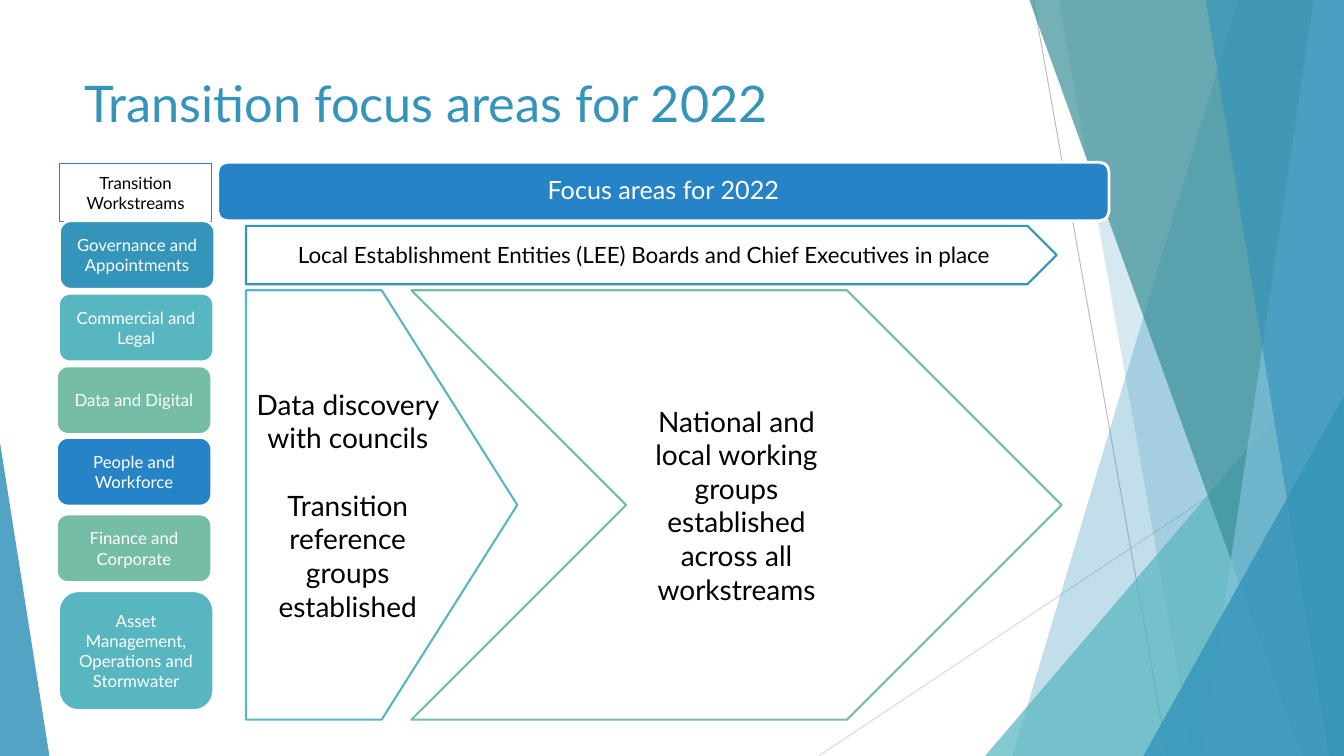
"""Builds the slide on transition workstreams and focus areas for 2022."""
import pptx
import pptx.dml.color
import pptx.enum.shapes
import pptx.enum.text
import pptx.oxml
import pptx.oxml.ns
import pptx.util

PX = 9144
SHAPE = pptx.enum.shapes.MSO_SHAPE
qn = pptx.oxml.ns.qn


def rgb(value):
    return pptx.dml.color.RGBColor.from_string(value)


def add_box(kind, box, fill, line, weight, texts, size, color):
    s = shapes.add_shape(kind, *[v * PX for v in box])
    s.shadow.inherit = False
    s.fill.solid()
    s.fill.fore_color.rgb = rgb(fill)
    s.line.color.rgb = rgb(line)
    s.line.width = pptx.util.Pt(weight)
    tf = s.text_frame
    tf.word_wrap = True
    tf.vertical_anchor = pptx.enum.text.MSO_ANCHOR.MIDDLE
    for i, text in enumerate(texts):
        p = tf.add_paragraph() if i else tf.paragraphs[0]
        p.text = text
        p.alignment = pptx.enum.text.PP_ALIGN.CENTER
        p.font.name = "Lato"
        p.font.size = pptx.util.Pt(size)
        p.font.color.rgb = rgb(color)
        if i:
            p.space_before = pptx.util.Pt(size * 1.2)
    return s


prs = pptx.Presentation()
prs.slide_width = 1333 * PX
prs.slide_height = 750 * PX
shapes = prs.slides.add_slide(prs.slide_layouts[6]).shapes

thin_lines = [
    ((1025, 0, 1158, 750), "BFBFBF"),
    ((1333, 403, 812, 750), "D9D9D9"),
]
for ends, color in thin_lines:
    c = shapes.add_connector(
        pptx.enum.shapes.MSO_CONNECTOR.STRAIGHT, *[v * PX for v in ends]
    )
    c.line.color.rgb = rgb(color)
    c.line.width = pptx.util.Pt(0.75)
    pptx.oxml.xmlchemy.OxmlElement
    c._element.spPr.append(pptx.oxml.parse_xml(
        '<a:effectLst xmlns:a="http://schemas.openxmlformats.org/drawingml/2006/main"/>'
    ))

facets = [
    ((1228, 1004), "3494BA", 30),
    ((1050, 1183), "3494BA", 20),
    ((977, 333, 356, 417, 1), "58B6C0", 72),
    ((1021, 1291), "3A8F98", 70),
    ((1303, 1192), "7FC1DB", 70),
    ((1196, 1318), "3494BA", 65),
    ((1134, 393, 199, 357, 1), "3494BA", 80),
    ((0, 439, 49, 311, 0), "3494BA", 85),
]
for geometry, color, opacity in facets:
    if len(geometry) == 2:
        top, bottom = geometry
        fb = shapes.build_freeform(top, 0, scale=PX)
        fb.add_line_segments([(1333, 0), (1333, 750), (bottom, 750)], close=True)
        s = fb.convert_to_shape()
    else:
        s = shapes.add_shape(
            SHAPE.ISOSCELES_TRIANGLE, *[v * PX for v in geometry[:4]]
        )
        s.adjustments[0] = geometry[4]
    s.shadow.inherit = False
    s.fill.solid()
    s.fill.fore_color.rgb = rgb(color)
    s.line.fill.background()
    clr = s._element.spPr.find(qn("a:solidFill")).find(qn("a:srgbClr"))
    alpha = clr.makeelement(qn("a:alpha"), {"val": str(opacity * 1000)})
    clr.append(alpha)

title = shapes.add_textbox(74 * PX, 67 * PX, 940 * PX, 80 * PX)
tf = title.text_frame
tf.word_wrap = True
p = tf.paragraphs[0]
p.text = "Transition focus areas for 2022"
p.font.name = "Lato"
p.font.size = pptx.util.Pt(36)
p.font.color.rgb = rgb("3494BA")

add_box(SHAPE.RECTANGLE, (59, 162, 151, 58), "FFFFFF", "2683C6", 0.5,
        ["Transition Workstreams"], 12, "000000")

workstreams = [
    ("Governance and Appointments", 59, 219, 68, "3494BA"),
    ("Commercial and Legal", 58, 291, 68, "58B6C0"),
    ("Data and Digital", 56, 363, 68, "75BDA7"),
    ("People and Workforce", 56, 434, 68, "2683C6"),
    ("Finance and Corporate", 56, 510, 68, "75BDA7"),
    ("Asset Management, Operations and Stormwater", 58, 586, 119, "58B6C0"),
]
for name, x, y, height, color in workstreams:
    add_box(SHAPE.ROUNDED_RECTANGLE, (x, y, 154, height), color, "FFFFFF", 2,
            [name], 12, "FFFFFF")

banner = add_box(SHAPE.ROUNDED_RECTANGLE, (216, 161, 884, 58), "2683C6", "FFFFFF", 2,
                 ["Focus areas for 2022"], 18, "FFFFFF")
banner.text_frame.paragraphs[0].line_spacing = 0.9

focus_areas = [
    (SHAPE.PENTAGON, (244, 224, 804, 58), "3494BA", 16,
     ["Local Establishment Entities (LEE) Boards and Chief Executives in place"]),
    (SHAPE.PENTAGON, (244, 288, 269, 426), "58B6C0", 20,
     ["Data discovery with councils", "Transition reference groups established"]),
    (SHAPE.CHEVRON, (408, 288, 645, 426), "75BDA7", 20,
     ["National and local working groups established across all workstreams"]),
]
for kind, box, color, size, texts in focus_areas:
    add_box(kind, box, "FFFFFF", color, 1.5, texts, size, "000000")

prs.save("out.pptx")
